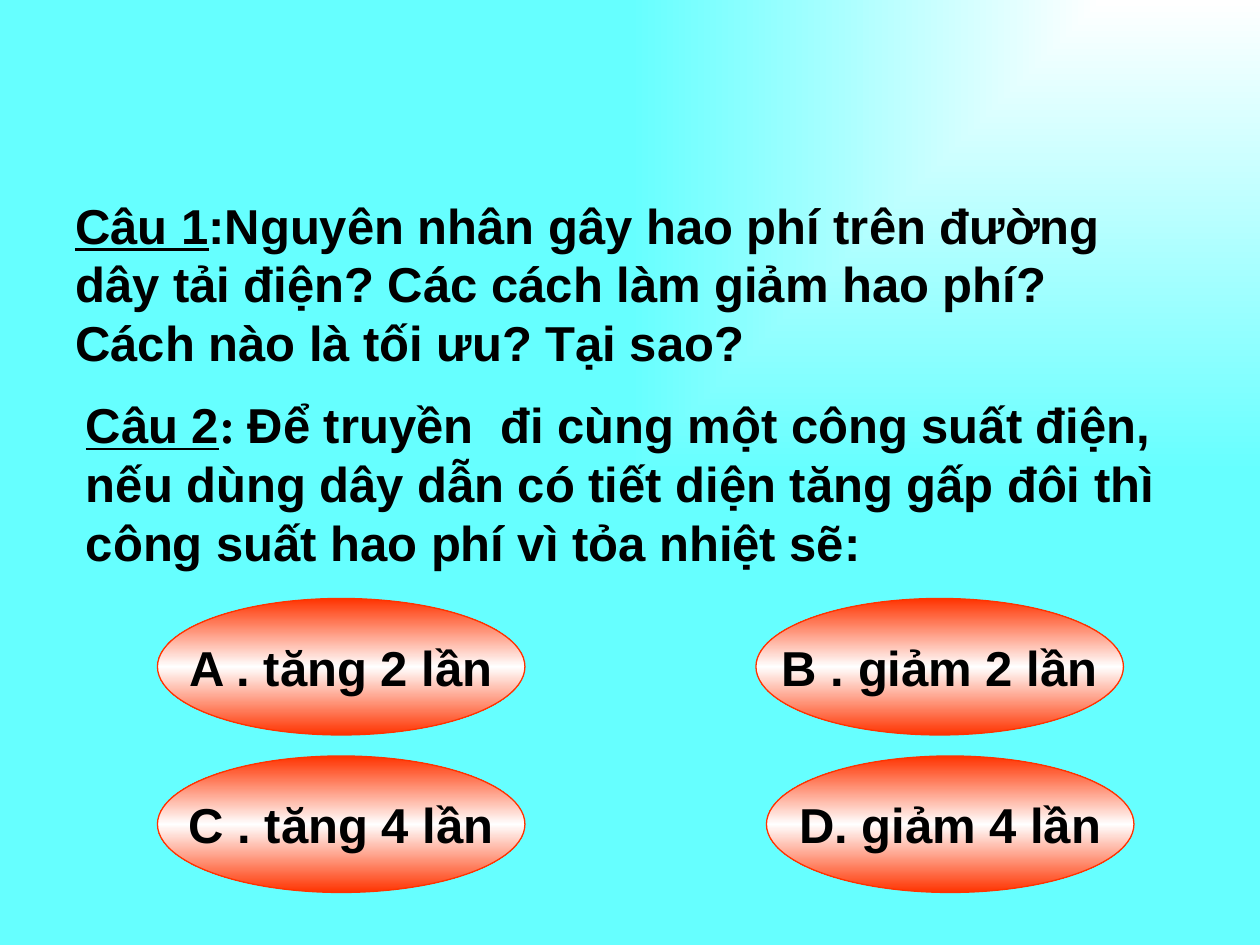
from dataclasses import dataclass

from lxml.etree import SubElement
from pptx import Presentation
from pptx.dml.color import RGBColor
from pptx.enum.shapes import MSO_SHAPE
from pptx.enum.text import MSO_ANCHOR, MSO_AUTO_SIZE, PP_ALIGN
from pptx.oxml.ns import qn
from pptx.util import Inches, Pt


@dataclass(frozen=True)
class Theme:
    sky: str = "66FFFF"
    white: str = "FFFFFF"
    red: str = "FF3300"
    ink: str = "000000"
    font: str = "Arial"
    colon_font: str = "Times New Roman"
    size: int = 28
    line: float = 0.75


THEME = Theme()
CELL = Inches(1) / 12  # the slide is a grid of 120 columns and 90 rows


def grid_box(column, row, columns, rows):
    return [round(CELL * count) for count in (column, row, columns, rows)]


def set_gradient(fill, owner, stops, corner=False):
    """Fill owner top to bottom, or outwards from its top right corner."""
    fill.gradient()
    gradient = owner.find(".//" + qn("a:gradFill"))
    for child in list(gradient):
        gradient.remove(child)
    stop_list = SubElement(gradient, qn("a:gsLst"))
    for percent, color in stops:
        stop = SubElement(stop_list, qn("a:gs"), pos=str(percent * 1000))
        SubElement(stop, qn("a:srgbClr"), val=color)
    if corner:
        shade = SubElement(gradient, qn("a:path"), path="rect")
        SubElement(shade, qn("a:fillToRect"), l="100000", b="100000")
    else:
        SubElement(gradient, qn("a:lin"), ang="5400000", scaled="1")


def add_run(paragraph, text, font_name=THEME.font, underline=False):
    run = paragraph.add_run()
    run.text = text
    run.font.name = font_name
    run.font.size = Pt(THEME.size)
    run.font.bold = True
    run.font.underline = underline
    run.font.color.rgb = RGBColor.from_string(THEME.ink)


def add_question(slide, box, label, parts):
    """Place an underlined label followed by (text, font) parts."""
    text_frame = slide.shapes.add_textbox(*box).text_frame
    text_frame.word_wrap = True
    text_frame.auto_size = MSO_AUTO_SIZE.SHAPE_TO_FIT_TEXT
    paragraph = text_frame.paragraphs[0]
    add_run(paragraph, label, underline=True)
    for text, font_name in parts:
        add_run(paragraph, text, font_name)


def add_answer(slide, box, text):
    shape = slide.shapes.add_shape(MSO_SHAPE.OVAL, *box)
    shape.shadow.inherit = False
    set_gradient(shape.fill, shape._element,
                 [(0, THEME.red), (50, THEME.white), (100, THEME.red)])
    shape.line.color.rgb = RGBColor.from_string(THEME.red)
    shape.line.width = Pt(THEME.line)
    text_frame = shape.text_frame
    text_frame.word_wrap = False
    text_frame.vertical_anchor = MSO_ANCHOR.MIDDLE
    paragraph = text_frame.paragraphs[0]
    paragraph.alignment = PP_ALIGN.CENTER
    add_run(paragraph, text)


def build_quiz_slide(presentation):
    slide = presentation.slides.add_slide(presentation.slide_layouts[6])
    set_gradient(slide.background.fill, slide._element,
                 [(0, THEME.white), (100, THEME.sky)], corner=True)

    add_question(slide, grid_box(6, 18, 106, 18), "Câu 1", [
        (":Nguyên nhân gây hao phí trên đường dây tải điện? "
         "Các cách làm giảm hao phí? Cách nào là tối ưu? Tại sao?", THEME.font),
    ])
    add_question(slide, grid_box(7, 37, 106, 18), "Câu 2", [
        (": ", THEME.colon_font),
        ("Để truyền  đi cùng một công suất điện, nếu dùng dây dẫn có tiết diện "
         "tăng gấp đôi thì công suất hao phí vì tỏa nhiệt sẽ:", THEME.font),
    ])

    answers = [
        (15, 57, "A . tăng 2 lần"),
        (72, 57, "B . giảm 2 lần"),
        (15, 72, "C . tăng 4 lần"),
        (73, 72, "D. giảm 4 lần"),
    ]
    for column, row, text in answers:
        add_answer(slide, grid_box(column, row, 35, 13), text)


def main():
    presentation = Presentation()
    presentation.slide_width = Inches(10)
    presentation.slide_height = Inches(7.5)
    build_quiz_slide(presentation)
    presentation.save("out.pptx")


if __name__ == "__main__":
    main()
